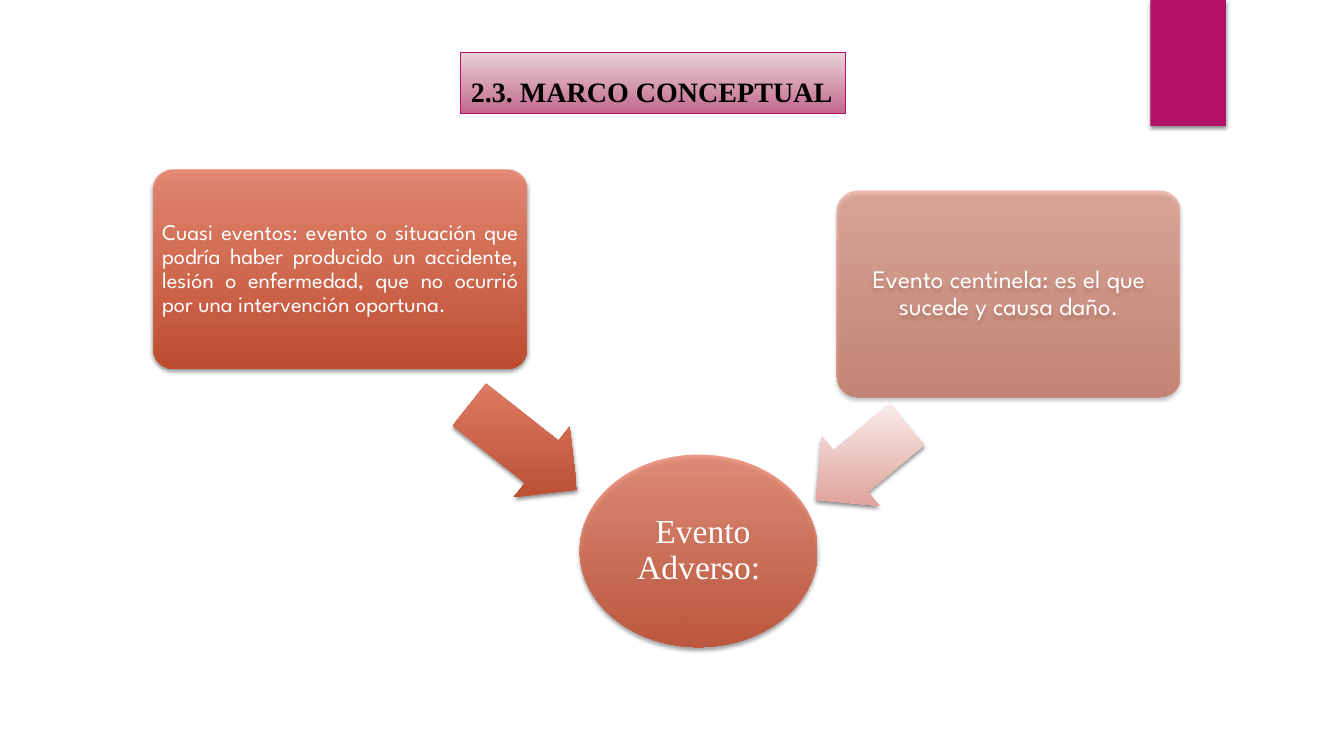
from lxml.etree import SubElement as Sub
from pptx import Presentation
from pptx.dml.color import RGBColor as RGB
from pptx.enum.shapes import MSO_SHAPE as Kind
from pptx.enum.text import MSO_ANCHOR as Anchor, MSO_AUTO_SIZE as Auto, PP_ALIGN as Align
from pptx.oxml.ns import qn
from pptx.util import Inches, Pt


def color(text):
    return RGB.from_string(text)


def assign(item, values):
    for name, value in values.items():
        setattr(item, name, value)


class Deck:
    serif = "Times New Roman"
    sans = "League Spartan"
    white = "FFFFFF"
    accent = "B31166"
    warm = ("EA856D", "C24525")

    def __init__(self):
        self.file = Presentation()
        assign(self.file, {"slide_width": Inches(13.33), "slide_height": Inches(7.5)})
        self.slide = self.file.slides.add_slide(self.file.slide_layouts[5])

    def place(self, left, top, width, height):
        wide, high = self.file.slide_width, self.file.slide_height
        return [int(part * side / 100) for part, side in
                zip((left, top, width, height), (wide, high, wide, high))]

    def blend(self, shape, pair, alpha=100):
        shape.fill.gradient()
        shape.fill.gradient_angle = 270
        for stop, tint in zip(shape.fill.gradient_stops, pair):
            stop.color.rgb = color(tint)
        grad = shape.element.spPr.find(qn("a:gradFill"))
        grad.set("rotWithShape", "0")
        if alpha < 100:
            for node in grad.iter(qn("a:srgbClr")):
                Sub(node, qn("a:alpha"), val=str(alpha * 1000))

    def shade(self, shape):
        shape.shadow.inherit = False
        base = shape.element.spPr.find(qn("a:effectLst"))
        glow = Sub(base, qn("a:outerShdw"), blurRad=str(Pt(3)), dist=str(Pt(2)),
                   dir="5400000", algn="ctr", rotWithShape="0")
        tint = Sub(glow, qn("a:srgbClr"), val="000000")
        Sub(tint, qn("a:alpha"), val="45000")

    def shape(self, kind, spot, pair, alpha=100, adjust=(), turn=0):
        shape = self.slide.shapes.add_shape(kind, *self.place(*spot))
        for index, value in enumerate(adjust):
            shape.adjustments[index] = value
        shape.rotation = turn
        shape.line.fill.background()
        self.blend(shape, pair, alpha)
        self.shade(shape)
        return shape

    def band(self, spot):
        self.shape(Kind.RECTANGLE, spot, (self.accent, self.accent))

    def arrow(self, spot, turn, pair):
        self.shape(Kind.LEFT_ARROW, spot, pair, adjust=(0.6, 0.5), turn=turn)

    def label(self, shape, text, font, tint, frame, para):
        box = shape.text_frame
        assign(box, frame)
        line = box.paragraphs[0]
        assign(line, para)
        run = line.add_run()
        run.text = text
        assign(run.font, font)
        run.font.color.rgb = color(tint)

    def note(self, kind, spot, text, size, face, alpha, align, inset, adjust=()):
        shape = self.shape(kind, spot, self.warm, alpha, adjust)
        frame = {"word_wrap": True, "vertical_anchor": Anchor.MIDDLE}
        for side in ("left", "top", "right", "bottom"):
            frame["margin_" + side] = Inches(inset)
        self.label(shape, text, {"size": Pt(size), "name": face}, self.white,
                   frame, {"alignment": align, "line_spacing": 0.9})

    def title(self, spot, text):
        shape = self.slide.shapes.title
        names = ("left", "top", "width", "height")
        assign(shape, dict(zip(names, self.place(*spot))))
        self.blend(shape, ("E9D1D8", "C2698B"))
        shape.line.color.rgb = color(self.accent)
        shape.line.width = Pt(0.75)
        self.label(shape, text, {"size": Pt(20), "name": self.serif, "bold": True}, "000000",
                   {"word_wrap": False, "auto_size": Auto.NONE, "vertical_anchor": Anchor.TOP},
                   {"alignment": Align.LEFT, "line_spacing": 1.5, "space_before": Pt(0)})


def main():
    deck = Deck()
    deck.band((85.6, 0, 5.63, 16.67))
    deck.title((34.28, 6.93, 28.66, 8.13), "2.3. MARCO CONCEPTUAL")
    deck.note(Kind.OVAL, (43.14, 60.13, 17.7, 25.47), " Evento Adverso:",
              24, deck.serif, 80, Align.CENTER, 0.01)
    deck.arrow((33.83, 53.2, 10.2, 11.87), 218.3, ("E17F68", "B3462A"))
    deck.note(Kind.ROUNDED_RECTANGLE, (11.4, 22.4, 27.83, 26.4),
              "Cuasi eventos: evento o situación que podría haber producido un accidente, "
              "lesión o enfermedad, que no ocurrió por una intervención oportuna.",
              16, deck.sans, 90, Align.JUSTIFY, 0.03, (0.1,))
    deck.arrow((59.71, 55.2, 8.78, 11.87), 320.3, ("FDF5F4", "D78E85"))
    deck.note(Kind.ROUNDED_RECTANGLE, (62.27, 25.2, 25.58, 27.33),
              "Evento centinela: es el que sucede y causa daño.",
              18, deck.sans, 50, Align.CENTER, 0.04, (0.1,))
    deck.file.save("out.pptx")


if __name__ == "__main__":
    main()
